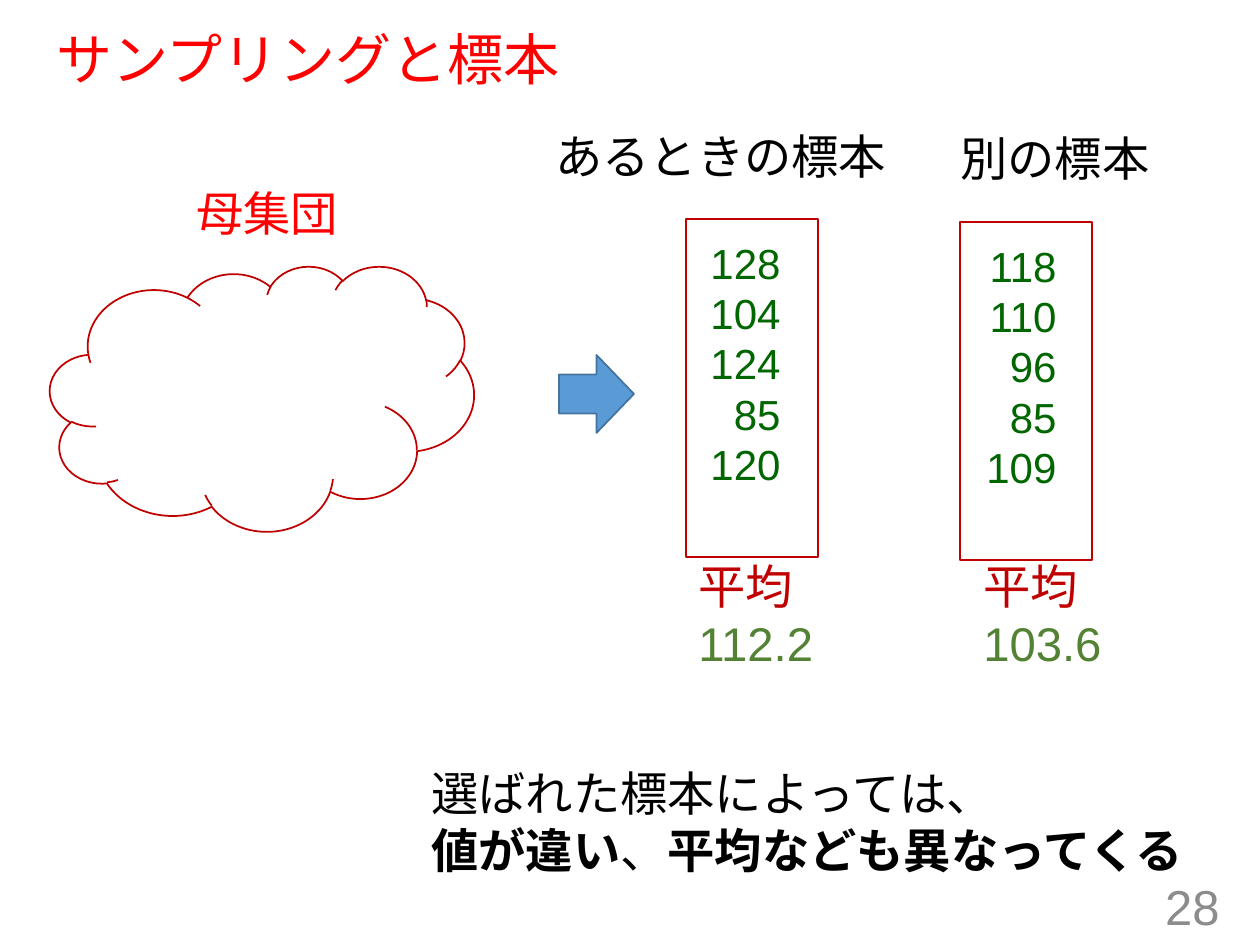
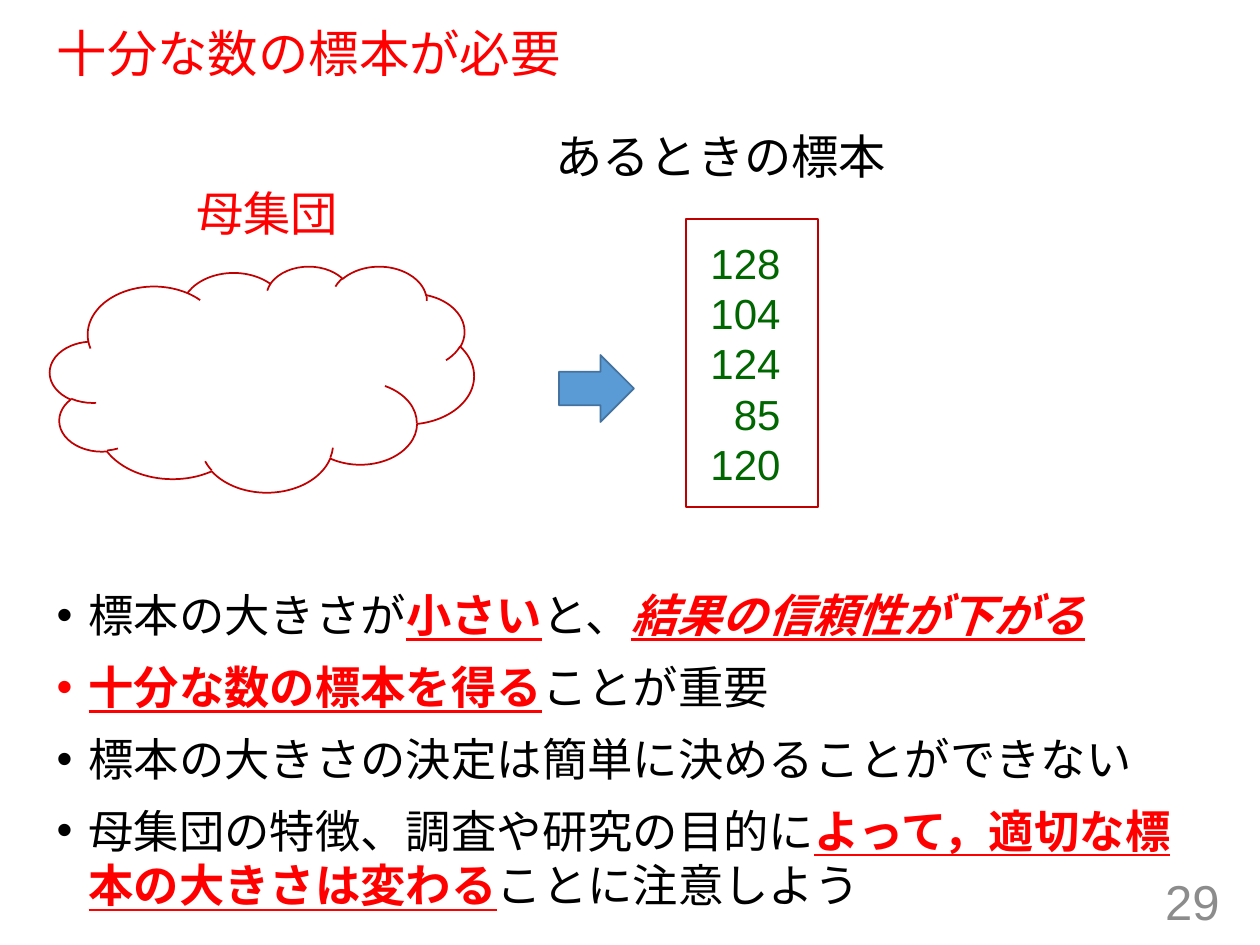
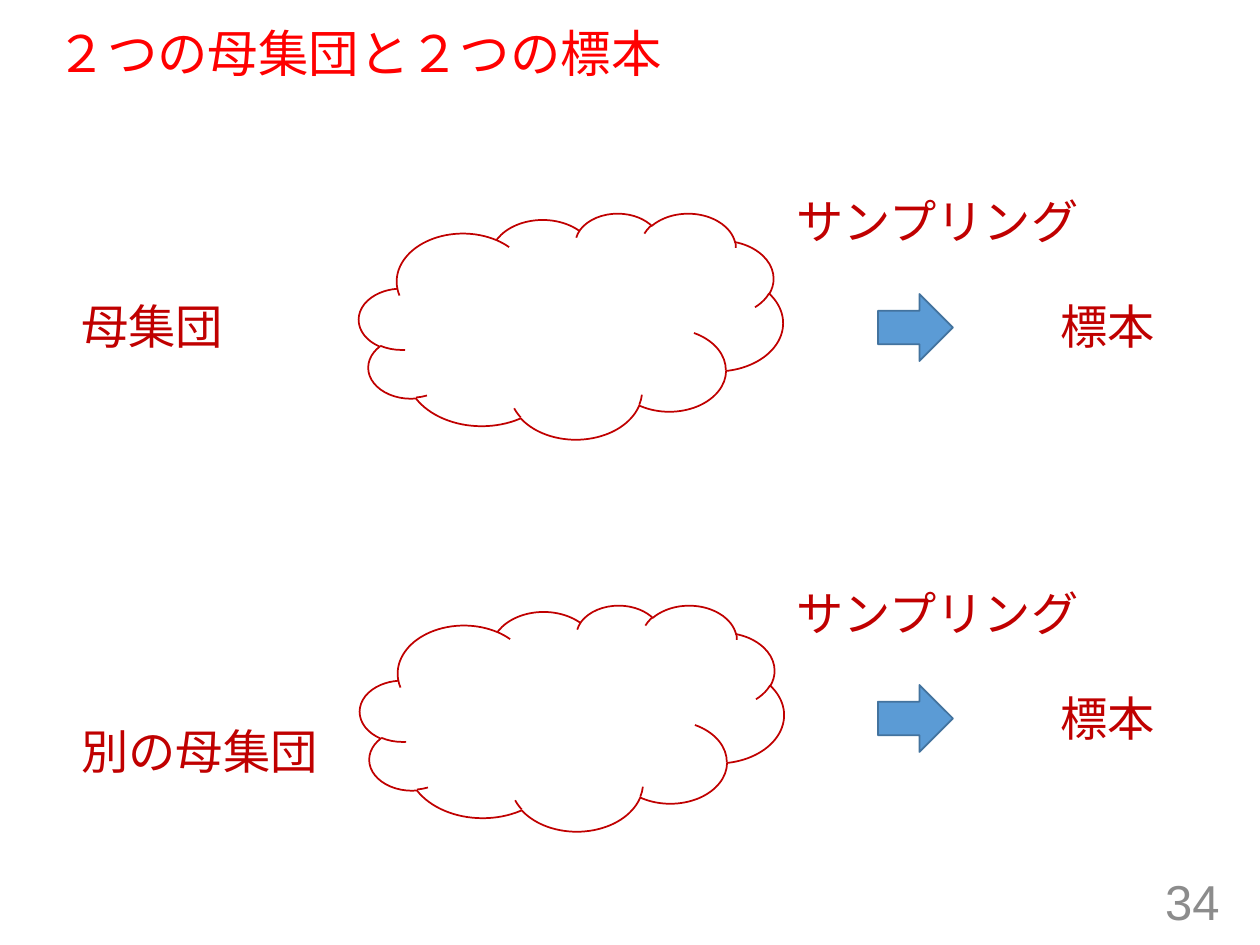
from pptx import Presentation
from pptx.dml.color import RGBColor
from pptx.enum.lang import MSO_LANGUAGE_ID as Language
from pptx.enum.shapes import MSO_SHAPE as Shape
from pptx.enum.text import MSO_ANCHOR as Anchor, MSO_AUTO_SIZE as AutoSize, PP_ALIGN as Align
from pptx.util import Pt

PX = 914400 // 126  # EMU per px
FONT = "Arial"
RED, DARK_RED, BLACK = "FF0000", "C00000", "000000"
GREEN, LIGHT_GREEN, GRAY = "006600", "548235", "8C8C8C"
BLUE, DARK_BLUE = "5B9BD5", "43739E"
LABEL_SIZE, CHAR_WIDTH = 27, 47
TITLE_ONLY, TITLE_AND_BODY = 5, 1
STRONG = dict(bold=True, underline=True, color=RED)


def write(shape, box, paragraphs, size=LABEL_SIZE, color=BLACK, align=Align.LEFT,
          anchor=Anchor.TOP, before=0, line_spacing=1.0, indent=0):
    """Each paragraph is a string or a list of (text, run format) pairs."""
    shape.left, shape.top, shape.width, shape.height = [PX * value for value in box]
    frame = shape.text_frame
    frame.word_wrap = True
    frame.auto_size = AutoSize.NONE
    frame.vertical_anchor = anchor
    for index, runs in enumerate(paragraphs):
        paragraph = frame.add_paragraph() if index else frame.paragraphs[0]
        paragraph.alignment = align
        paragraph.line_spacing = line_spacing
        paragraph.space_before = Pt(before if index else 0)
        if indent:
            properties = paragraph._p.get_or_add_pPr()
            properties.set("marL", str(indent * PX))
            properties.set("indent", str(-indent * PX))
        for text, style in [(runs, {})] if isinstance(runs, str) else runs:
            run = paragraph.add_run()
            run.text = text
            font = run.font
            font.name, font.size, font.language_id = FONT, Pt(size), Language.JAPANESE
            font.bold = style.get("bold", False)
            font.italic = style.get("italic", False)
            font.underline = style.get("underline", False)
            font.color.rgb = RGBColor.from_string(style.get("color", color))


def draw(slide, kind, box, line=DARK_RED, fill=None):
    shape = slide.shapes.add_shape(kind, *[PX * value for value in box])
    shape.shadow.inherit = False
    shape.line.color.rgb = RGBColor.from_string(line)
    shape.line.width = Pt(1)
    if fill:
        shape.fill.solid()
        shape.fill.fore_color.rgb = RGBColor.from_string(fill)
    else:
        shape.fill.background()


presentation = Presentation()
presentation.slide_width, presentation.slide_height = 1260 * PX, 945 * PX

# Titles and page numbers
slides = []
for title, layout, title_size, title_height, number, number_height in [
    ("サンプリングと標本", TITLE_ONLY, 32, 76, "28", 59),
    ("十分な数の標本が必要", TITLE_AND_BODY, 28.8, 64, "29", 50),
    ("２つの母集団と２つの標本", TITLE_ONLY, 28.8, 64, "34", 50),
]:
    slide = presentation.slides.add_slide(presentation.slide_layouts[layout])
    write(slide.shapes.title, (44, 24, 1166, title_height), [title], size=title_size,
          color=RED, anchor=Anchor.MIDDLE, line_spacing=0.9)
    write(slide.shapes.add_textbox(0, 0, 0, 0), (949, 876, 283, number_height), [number],
          size=28, color=GRAY, align=Align.RIGHT, anchor=Anchor.MIDDLE)
    slides.append(slide)
sampling, sample_size, two_populations = slides

# Population clouds and sampling arrows
for slide, cloud_left, cloud_top, cloud_height, arrow_left, arrow_top, arrow_height in [
    (sampling, 50, 266, 265, 559, 355, 78),
    (sample_size, 50, 266, 226, 559, 355, 67),
    (two_populations, 359, 213, 226, 878, 294, 67),
    (two_populations, 360, 605, 226, 878, 685, 67),
]:
    draw(slide, Shape.CLOUD, (cloud_left, cloud_top, 424, cloud_height))
    draw(slide, Shape.RIGHT_ARROW, (arrow_left, arrow_top, 75, arrow_height),
         line=DARK_BLUE, fill=BLUE)

# Samples: frame with its values
first_sample = ["128", "104", "124", "85", "120"]
second_sample = ["118", "110", "96", "85", "109"]
for slide, left, top, height, values_left, values in [
    (sampling, 686, 219, 338, 693, first_sample),
    (sampling, 960, 222, 338, 969, second_sample),
    (sample_size, 686, 219, 288, 693, first_sample),
]:
    draw(slide, Shape.RECTANGLE, (left, top, 132, height))
    write(slide.shapes.add_textbox(0, 0, 0, 0), (values_left, top + 12, 100, height - 24),
          values, size=24, color=GREEN, align=Align.RIGHT)

# Labels
for slide, left, top, height, text, color in [
    (sampling, 543, 121, 82, "あるときの標本", BLACK),
    (sampling, 948, 123, 82, "別の標本", BLACK),
    (sampling, 184, 178, 82, "母集団", RED),
    (sample_size, 543, 121, 71, "あるときの標本", BLACK),
    (sample_size, 184, 178, 71, "母集団", RED),
    (two_populations, 69, 291, 71, "母集団", DARK_RED),
    (two_populations, 69, 716, 71, "別の母集団", DARK_RED),
    (two_populations, 784, 186, 71, "サンプリング", DARK_RED),
    (two_populations, 784, 578, 71, "サンプリング", DARK_RED),
    (two_populations, 1048, 291, 71, "標本", DARK_RED),
    (two_populations, 1048, 683, 71, "標本", DARK_RED),
]:
    write(slide.shapes.add_textbox(0, 0, 0, 0),
          (left, top, len(text) * CHAR_WIDTH + 32, height), [text], color=color)

# Sample means and conclusion
for left, mean in [(686, "112.2"), (971, "103.6")]:
    write(sampling.shapes.add_textbox(0, 0, 0, 0), (left, 551, 151, 149),
          ["平均", [(mean, dict(color=LIGHT_GREEN))]], color=DARK_RED)
write(sampling.shapes.add_textbox(0, 0, 0, 0), (419, 758, 800, 140), [
    "選ばれた標本によっては、",
    [("値が違い", dict(bold=True)), ("、", {}), ("平均なども異なってくる", dict(bold=True))],
])

# Notes on the sample size
write(sample_size.placeholders[1], (44, 581, 1166, 345), [
    [("標本の大きさが", {}), ("小さい", STRONG), ("と、", {}),
     ("結果の信頼性が下がる", dict(STRONG, italic=True))],
    [("十分な数の標本を得る", STRONG), ("ことが重要", {})],
    "標本の大きさの決定は簡単に決めることができない",
    [("母集団の特徴、調査や研究の目的に", {}), ("よって，適切な標本の大きさは変わる", STRONG),
     ("ことに注意しよう", {})],
], size=25.9, before=10, indent=32)

presentation.save("out.pptx")
